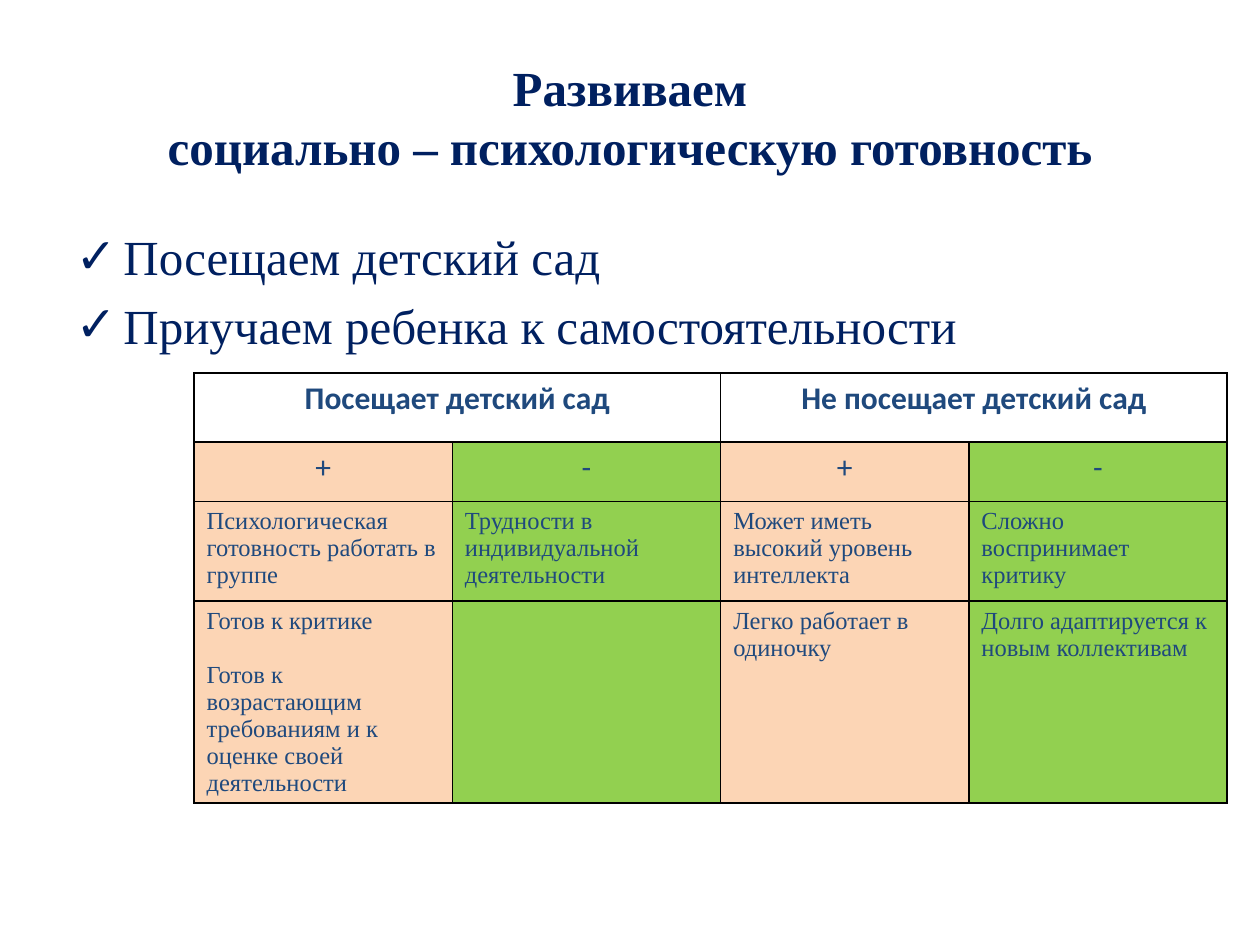
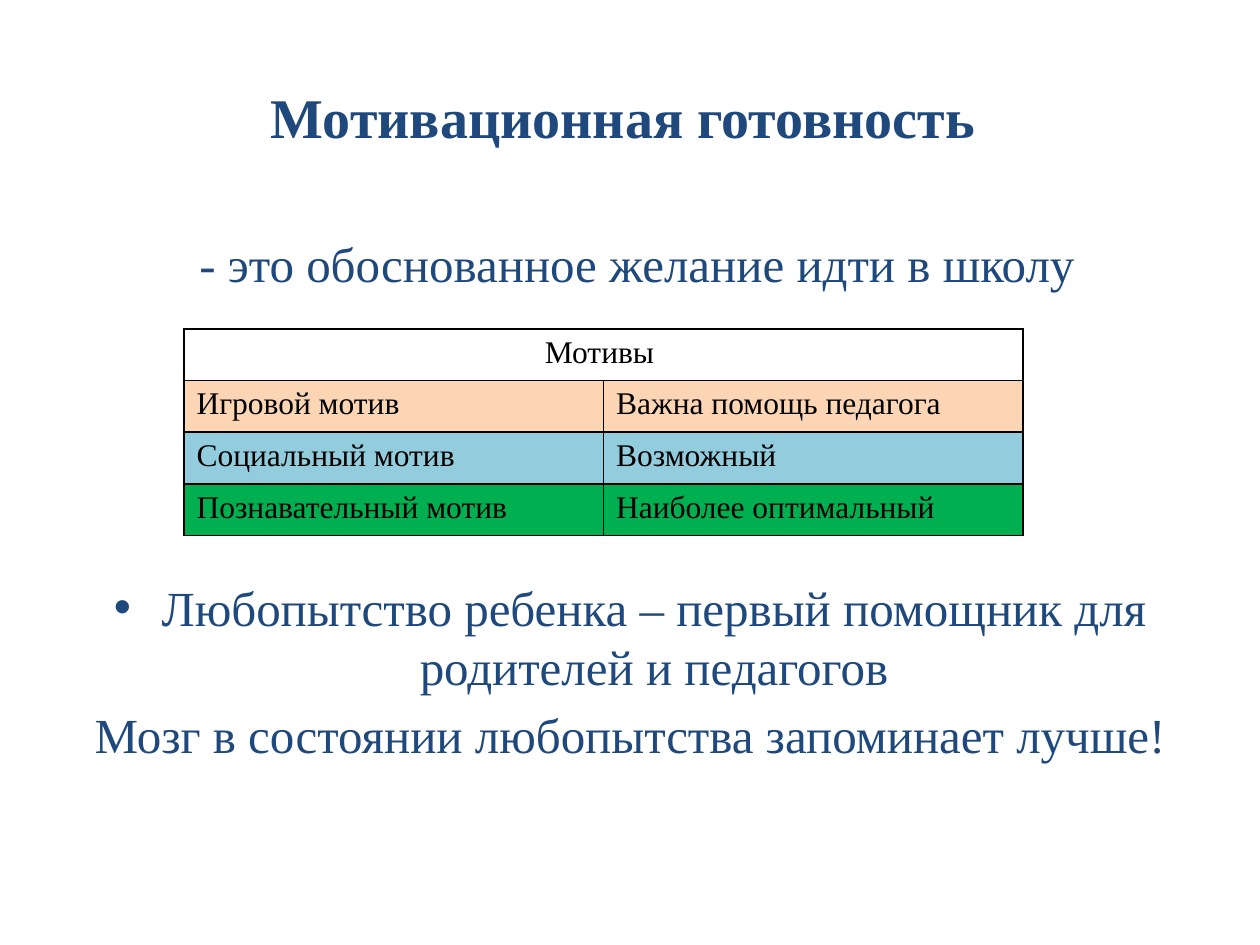
from copy import deepcopy

from lxml.etree import SubElement
from pptx import Presentation
from pptx.dml.color import RGBColor
from pptx.enum.text import PP_ALIGN as Align
from pptx.oxml.ns import qn
from pptx.util import Inches, Pt

COLORS = {
    "navy": "002060", "blue": "1F497D", "black": "000000", "white": "FFFFFF",
    "peach": "FCD5B5", "lime": "92D050", "sky": "93CDDD", "green": "00B050",
}
SERIF, SANS = "Times New Roman", "Calibri"
TITLE_AND_CONTENT = 1


def rgb(name):
    """Return the palette colour with this name."""
    return RGBColor.from_string(COLORS[name])


def add_text(paragraph, text, size=28, font=SERIF, color="blue", bold=False,
             align=None, before=None, bullet=None, indent=None, hanging=0):
    """Write formatted text, with an optional bullet, into a paragraph."""
    paragraph.text = text
    props = paragraph._p.get_or_add_pPr()
    if indent is not None:
        props.set("marL", str(Inches(indent)))
        props.set("indent", str(-Inches(hanging)))
        if bullet:
            SubElement(props, qn("a:buChar")).set("char", bullet)
        else:
            SubElement(props, qn("a:buNone"))
    if align is not None:
        paragraph.alignment = align
    if before is not None:
        paragraph.space_before = Pt(before)
    for run in paragraph.runs:
        run.font.name, run.font.size, run.font.bold = font, Pt(size), bold
        run.font.color.rgb = rgb(color)
    for line_break in paragraph._p.findall(qn("a:br")):
        line_break.append(deepcopy(paragraph.runs[0].font._element))


def add_lines(frame, lines, **shared):
    """Fill a text frame with (text, format) lines that share a format."""
    for number, (text, style) in enumerate(lines):
        paragraph = frame.add_paragraph() if number else frame.paragraphs[0]
        add_text(paragraph, text, **{**shared, **style})


def add_content_slide(deck, title, lines, title_size, color):
    """Add a slide with a heading and a list in the template's placeholders."""
    slide = deck.slides.add_slide(deck.slide_layouts[TITLE_AND_CONTENT])
    add_text(slide.shapes.title.text_frame.paragraphs[0], title,
             size=title_size, color=color, bold=True, align=Align.CENTER)
    add_lines(slide.placeholders[1].text_frame, lines, color=color)
    return slide


def style_cell(cell, fill):
    """Give a cell its fill and thin black borders."""
    props = cell._tc.get_or_add_tcPr()
    for side in ("a:lnL", "a:lnR", "a:lnT", "a:lnB"):
        border = SubElement(props, qn(side), w=str(Pt(1)))
        SubElement(SubElement(border, qn("a:solidFill")), qn("a:srgbClr")).set("val", COLORS["black"])
    cell.fill.solid()
    cell.fill.fore_color.rgb = rgb(fill)


def add_grid(slide, left, top, widths, heights, fill_of, header_span):
    """Add a bordered table whose header cells each span some columns."""
    grid = slide.shapes.add_table(
        len(heights), len(widths), Inches(left), Inches(top),
        Inches(sum(widths)), Inches(sum(heights))).table
    grid.first_row = grid.horz_banding = False
    for column, width in zip(grid.columns, widths):
        column.width = Inches(width)
    for row, height in zip(grid.rows, heights):
        row.height = Inches(height)
    for r in range(len(heights)):
        for c in range(len(widths)):
            style_cell(grid.cell(r, c), fill_of(r, c))
    for c in range(0, len(widths), header_span):
        grid.cell(0, c).merge(grid.cell(0, c + header_span - 1))
    return grid


def add_kindergarten_table(slide, left, top):
    """Compare children who attend kindergarten with those who do not."""
    grid = add_grid(slide, left, top, [2.05, 2.13, 1.97, 2.05], [0.55, 0.47, 0.79, 1.6],
                    lambda r, c: ("peach", "lime")[c % 2] if r else "white", 2)
    heading = dict(size=18, font=SANS, align=Align.CENTER)
    for c, group in ((0, "Посещает детский сад"), (2, "Не посещает детский сад")):
        add_text(grid.cell(0, c).text_frame.paragraphs[0], group, bold=True, **heading)
    for c, sign in enumerate("+-+-"):
        add_text(grid.cell(1, c).text_frame.paragraphs[0], sign, **heading)
    traits = [
        [["Психологическая готовность работать в группе"],
         ["Трудности в индивидуальной деятельности"],
         ["Может иметь высокий уровень интеллекта"],
         ["Сложно воспринимает критику"]],
        [["Готов к критике",
          "Готов к возрастающим требованиям и к оценке своей деятельности"],
         [],
         ["Легко работает в одиночку"],
         ["Долго адаптируется к новым коллективам"]],
    ]
    for r, row in enumerate(traits, 2):
        for c, items in enumerate(row):
            lines = [(item, {"before": 15.5 if n else 0}) for n, item in enumerate(items)]
            add_lines(grid.cell(r, c).text_frame, lines, size=14)


def add_motive_table(slide, left, top):
    """List the motives for going to school."""
    fills = ["white", "peach", "sky", "green"]
    motives = [("Игровой мотив", "Важна помощь педагога"),
               ("Социальный мотив", "Возможный"),
               ("Познавательный мотив", "Наиболее оптимальный")]
    grid = add_grid(slide, left, top, [3.33] * 2, [0.41] * 4, lambda r, c: fills[r], 2)
    add_text(grid.cell(0, 0).text_frame.paragraphs[0], "Мотивы ",
             size=18, color="black", align=Align.CENTER)
    for r, motive in enumerate(motives, 1):
        for c, text in enumerate(motive):
            add_text(grid.cell(r, c).text_frame.paragraphs[0], text, size=18, color="black")


def build_social_slide(deck):
    """Build the slide on social and psychological readiness."""
    check = dict(bullet="✓", indent=0.38, hanging=0.38)
    slide = add_content_slide(
        deck, "Развиваем\v социально – психологическую готовность ",
        [("Посещаем детский сад", {**check, "before": 0}),
         ("Приучаем ребенка к самостоятельности", check)], 28, "navy")
    add_kindergarten_table(slide, 1.54, 2.96)


def build_motivation_slide(deck):
    """Build the slide on motivational readiness."""
    centred = dict(align=Align.CENTER, indent=0)
    slide = add_content_slide(
        deck, "Мотивационная готовность ",
        [("- это обоснованное желание идти в школу", {**centred, "indent": 0.11, "before": 0}),
         ("Любопытство ребенка – первый помощник для родителей и педагогов",
          {**centred, "bullet": "•", "indent": 0.38, "hanging": 0.38, "before": 163}),
         ("Мозг в состоянии любопытства запоминает лучше!", centred)], 32, "blue")
    body = slide.placeholders[1]
    body.left, body.top = Inches(0.5), Inches(1.8)
    body.width, body.height = Inches(9), Inches(4.9)
    add_motive_table(slide, 1.46, 2.61)


def main():
    """Build and save the deck."""
    deck = Presentation()
    deck.slide_width, deck.slide_height = Inches(10), Inches(7.5)
    build_social_slide(deck)
    build_motivation_slide(deck)
    deck.save("out.pptx")


if __name__ == "__main__":
    main()
